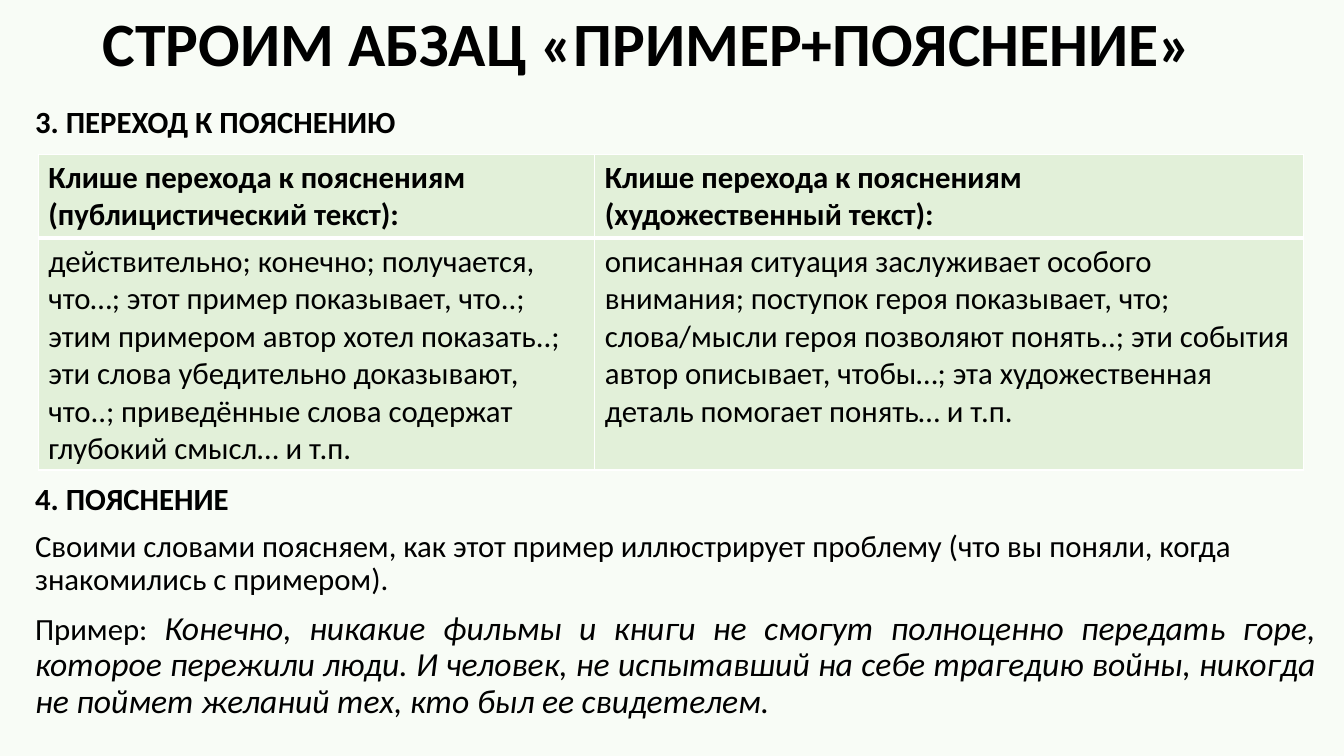
"""Builds the slide on the "example + explanation" paragraph."""
from lxml import etree
from pptx import Presentation
from pptx.dml.color import RGBColor
from pptx.enum.text import MSO_ANCHOR, PP_ALIGN
from pptx.oxml.ns import qn
from pptx.util import Inches, Pt

LEFT, JUSTIFY = PP_ALIGN.LEFT, PP_ALIGN.JUSTIFY
TOP, MIDDLE = MSO_ANCHOR.TOP, MSO_ANCHOR.MIDDLE
FONT = "Calibri"
COLORS = {"page": "F8FCF6", "cell": "E2F0D9", "border": "FFFFFF", "text": "000000"}

TITLE = "СТРОИМ АБЗАЦ «ПРИМЕР+ПОЯСНЕНИЕ»"
TRANSITION = "3. ПЕРЕХОД К ПОЯСНЕНИЮ"
EXPLANATION = "4. ПОЯСНЕНИЕ"
ADVICE = ("Своими словами поясняем, как этот пример иллюстрирует проблему "
          "(что вы поняли, когда знакомились с примером).")
EXAMPLE_LABEL = "Пример: "
EXAMPLE = ("Конечно, никакие фильмы и книги не смогут полноценно передать горе, "
           "которое пережили люди. И человек, не испытавший на себе трагедию войны, "
           "никогда не поймет желаний тех, кто был ее свидетелем.")
CLICHES = [
    [["Клише перехода к пояснениям (публицистический текст):"],
     ["Клише перехода к пояснениям", "(художественный текст):"]],
    [["действительно; конечно; получается, что…; этот пример показывает, что..; "
      "этим примером автор хотел показать..; эти слова убедительно доказывают, что..; "
      "приведённые слова содержат глубокий смысл… и т.п."],
     ["описанная ситуация заслуживает особого внимания; поступок героя показывает, что; "
      "слова/мысли героя позволяют понять..; эти события автор описывает, чтобы…; "
      "эта художественная деталь помогает понять… и т.п."]],
]
COLUMN_WIDTHS = [5.52, 7.03]
ROW_HEIGHTS = [0.83, 2.3]


def style(font, size, bold=False, italic=False):
    font.name, font.size, font.bold, font.italic = FONT, Pt(size), bold, italic
    font.color.rgb = RGBColor.from_string(COLORS["text"])


def add_text(page, area, paragraphs, anchor=TOP):
    box = page.shapes.add_textbox(*map(Inches, area))
    frame = box.text_frame
    frame.word_wrap = True
    frame.vertical_anchor = anchor
    for index, (align, spans) in enumerate(paragraphs):
        para = frame.add_paragraph() if index else frame.paragraphs[0]
        para.alignment = align
        para.line_spacing = 0.9
        para.space_before = Pt(10 if index else 0)
        if len(spans) == 1:
            style(para.font, *spans[0][1:])
        for text, *look in spans:
            span = para.add_run()
            span.text = text
            if len(spans) > 1:
                style(span.font, *look)


def add_borders(cell, widths):
    properties = cell._tc.get_or_add_tcPr()
    for side, width in widths.items():
        line = etree.SubElement(properties, qn(f"a:ln{side}"), w=str(Pt(width)))
        fill = etree.SubElement(line, qn("a:solidFill"))
        etree.SubElement(fill, qn("a:srgbClr"), val=COLORS["border"])


def add_cliche_table(page):
    table = page.shapes.add_table(
        len(ROW_HEIGHTS), len(COLUMN_WIDTHS), Inches(0.38), Inches(1.53),
        Inches(sum(COLUMN_WIDTHS)), Inches(sum(ROW_HEIGHTS))).table
    for column, width in zip(table.columns, COLUMN_WIDTHS):
        column.width = Inches(width)
    for row, height in zip(table.rows, ROW_HEIGHTS):
        row.height = Inches(height)
    for row_index, row in enumerate(CLICHES):
        header = row_index == 0
        for column_index, lines in enumerate(row):
            cell = table.cell(row_index, column_index)
            add_borders(cell, {"L": 1, "R": 1, "T": 1 if header else 3, "B": 3 if header else 1})
            cell.fill.solid()
            cell.fill.fore_color.rgb = RGBColor.from_string(COLORS["cell"])
            cell.text = "\n".join(lines)
            for para in cell.text_frame.paragraphs:
                style(para.font, 22, header)


def main():
    deck = Presentation()
    deck.slide_width, deck.slide_height = Inches(13.33), Inches(7.5)
    page = deck.slides.add_slide(deck.slide_layouts[6])
    page.background.fill.solid()
    page.background.fill.fore_color.rgb = RGBColor.from_string(COLORS["page"])
    add_text(page, (0.92, 0, 11.5, 0.92), [(LEFT, [(TITLE, 44, True)])], MIDDLE)
    add_text(page, (0.25, 1.01, 12.9, 0.45), [(LEFT, [(TRANSITION, 22, True)])])
    add_cliche_table(page)
    add_text(page, (0.25, 4.75, 12.9, 2.75), [
        (LEFT, [(EXPLANATION, 22, True)]),
        (LEFT, [(ADVICE, 22)]),
        (JUSTIFY, [(EXAMPLE_LABEL, 22), (EXAMPLE, 24, False, True)]),
    ])
    deck.save("out.pptx")


if __name__ == "__main__":
    main()
